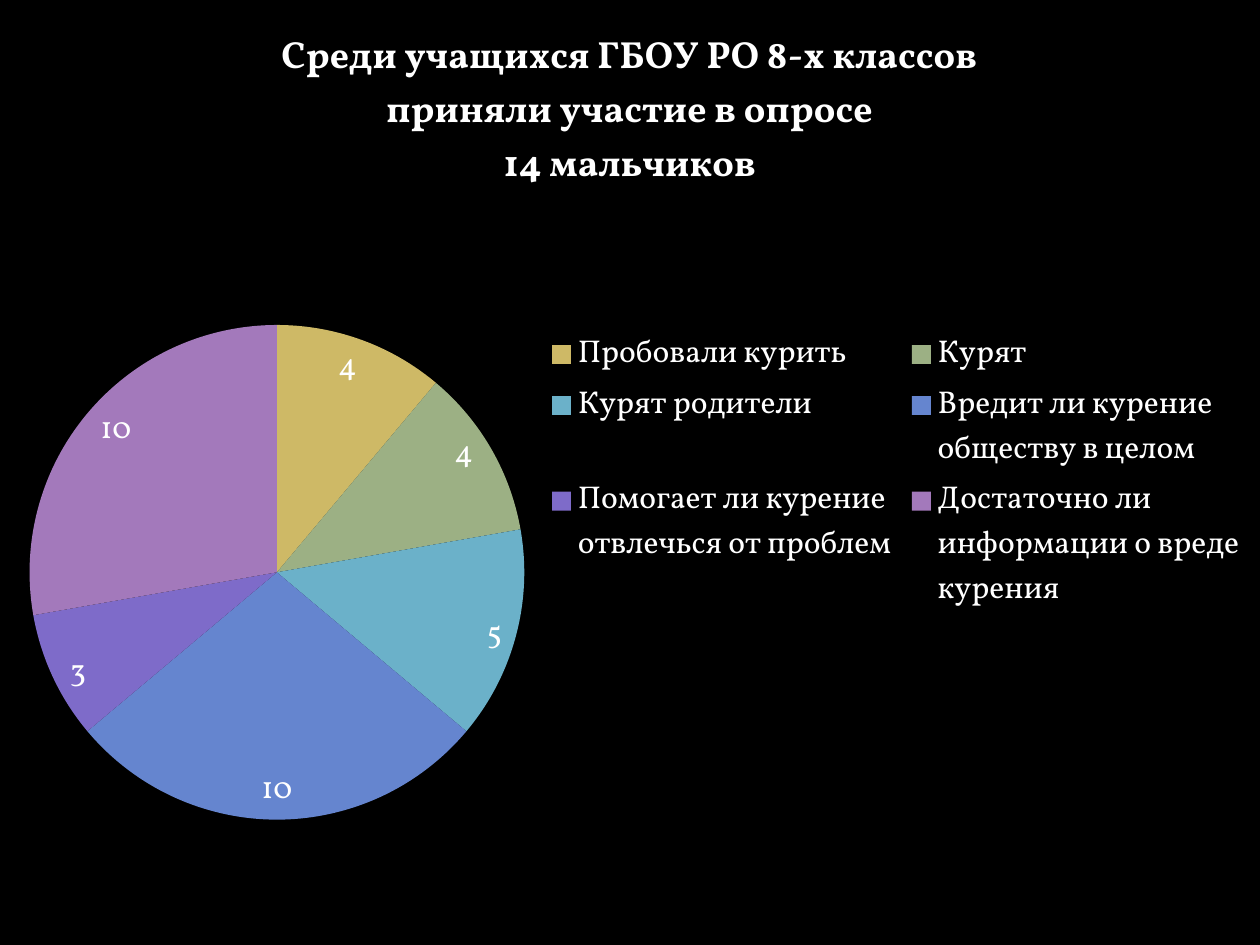
from pptx import Presentation
from pptx.chart.data import CategoryChartData
from pptx.dml.color import RGBColor
from pptx.enum.chart import XL_CHART_TYPE, XL_LABEL_POSITION, XL_LEGEND_POSITION
from pptx.enum.text import PP_ALIGN
from pptx.util import Cm, Pt

PIE = XL_CHART_TYPE.PIE
BEST_FIT = XL_LABEL_POSITION.BEST_FIT
LEGEND_RIGHT = XL_LEGEND_POSITION.RIGHT
CENTER = PP_ALIGN.CENTER

FONT = "Vollkorn"
COLORS = {
    "background": "000000",
    "text": "FFFFFF",
    "tried": "CEB966",
    "smoke": "9CB084",
    "parents": "6BB1C9",
    "harm": "6585CF",
    "distraction": "7E6BC9",
    "information": "A379BB",
}
TITLE_LINES = [
    "Среди учащихся ГБОУ РО 8-х классов",
    "приняли участие в опросе",
    "14 мальчиков",
]
ANSWERS = [
    ("Пробовали курить", 4, "tried"),
    ("Курят", 4, "smoke"),
    ("Курят родители", 5, "parents"),
    ("Вредит ли курение обществу в целом", 10, "harm"),
    ("Помогает ли курение отвлечься от проблем", 3, "distraction"),
    ("Достаточно ли информации о вреде курения", 10, "information"),
]


def rgb(name):
    return RGBColor.from_string(COLORS[name])


def format_font(font, size=18, bold=False, color="text"):
    font.name = FONT
    font.size = Pt(size)
    font.bold = bold
    font.color.rgb = rgb(color)


def write_lines(frame, lines, align=CENTER, **font_format):
    """Fill a text frame with one formatted paragraph per line."""
    for index, line in enumerate(lines):
        paragraph = frame.paragraphs[0] if index == 0 else frame.add_paragraph()
        paragraph.alignment = align
        run = paragraph.add_run()
        run.text = line
        format_font(run.font, **font_format)


def add_survey_chart(slide, left, top, width, height):
    data = CategoryChartData()
    data.categories = [answer for answer, _, _ in ANSWERS]
    data.add_series("Series 1", [count for _, count, _ in ANSWERS])
    chart = slide.shapes.add_chart(PIE, left, top, width, height, data).chart
    format_font(chart.font)

    chart.has_title = True
    write_lines(chart.chart_title.text_frame, TITLE_LINES, size=21.6, bold=True)
    chart.chart_title.include_in_layout = False

    plot = chart.plots[0]
    plot.vary_by_categories = True
    for index, (_, _, color) in enumerate(ANSWERS):
        fill = plot.series[0].points[index].format.fill
        fill.solid()
        fill.fore_color.rgb = rgb(color)
    plot.has_data_labels = True
    labels = plot.data_labels
    labels.show_value = True
    labels.show_percentage = False
    labels.position = BEST_FIT
    format_font(labels.font)

    chart.has_legend = True
    legend = chart.legend
    legend.position = LEGEND_RIGHT
    legend.include_in_layout = False
    format_font(legend.font)


def main():
    deck = Presentation()
    deck.slide_width, deck.slide_height = Cm(25.4), Cm(19.05)
    slide = deck.slides.add_slide(deck.slide_layouts[6])
    slide.background.fill.solid()
    slide.background.fill.fore_color.rgb = rgb("background")
    add_survey_chart(slide, 0, 0, deck.slide_width, deck.slide_height)
    deck.save("out.pptx")


if __name__ == "__main__":
    main()
